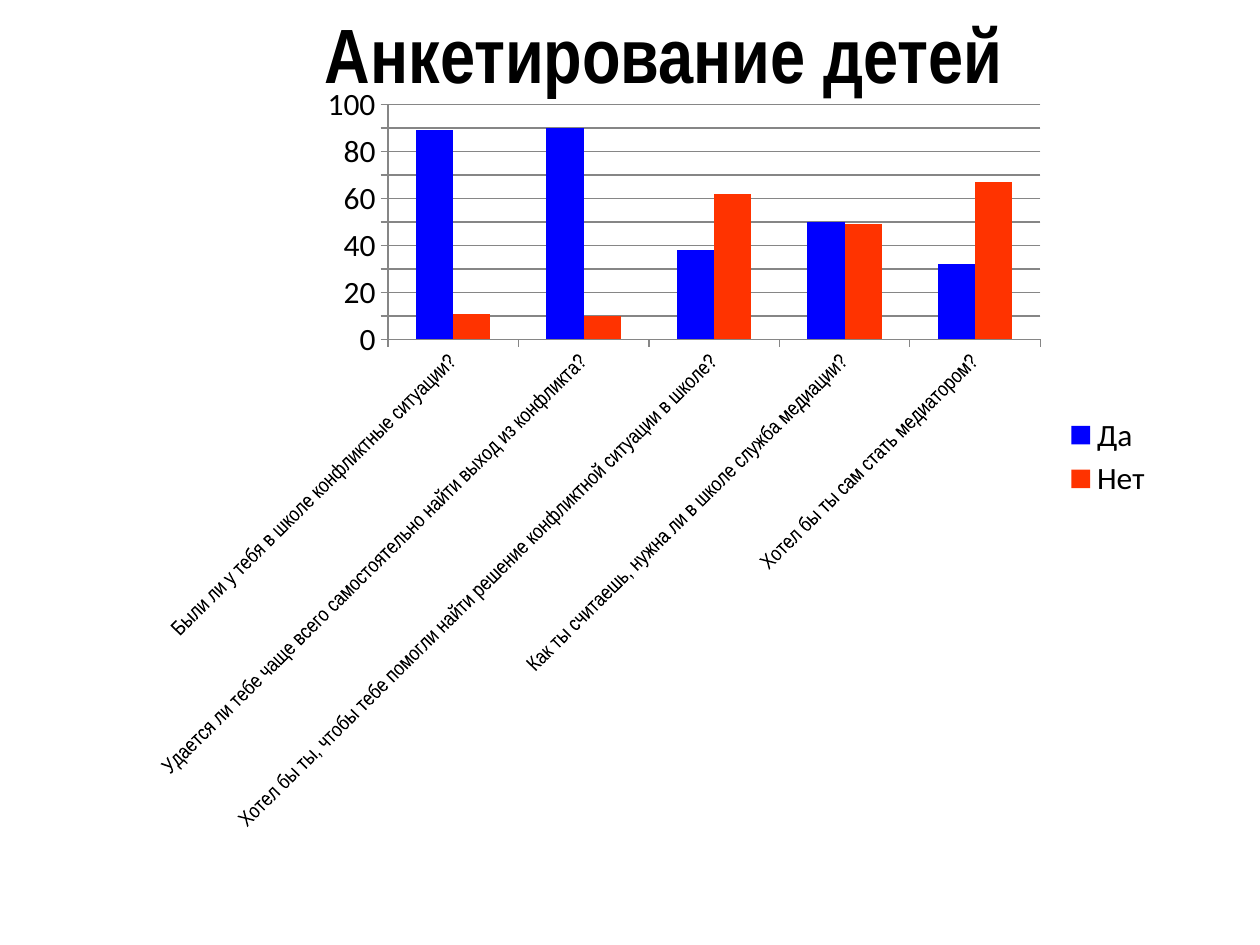
from dataclasses import dataclass

from pptx import Presentation
from pptx import util as u
from pptx.chart.data import CategoryChartData
from pptx.dml.color import RGBColor
from pptx.enum import chart as ch
from pptx.enum import text
from pptx.oxml.ns import qn

COLOURS = {"text": "000000", "yes": "0000FF", "no": "FF3300", "grid": "868686"}


@dataclass(frozen=True)
class Question:
    wording: str
    yes: int
    no: int


@dataclass(frozen=True)
class Answer:
    name: str
    key: str


QUESTIONS = [
    Question("Были ли у тебя в школе конфликтные ситуации?", 89, 11),
    Question("Удается ли тебе чаще всего самостоятельно найти выход из конфликта?", 90, 10),
    Question("Хотел бы ты, чтобы тебе помогли найти решение конфликтной ситуации в школе?", 38, 62),
    Question("Как ты считаешь, нужна ли в школе служба медиации?", 50, 49),
    Question("Хотел бы ты сам стать медиатором?", 32, 67),
]
ANSWERS = [Answer("Да", "yes"), Answer("Нет", "no")]


def colour(key: str) -> RGBColor:
    return RGBColor.from_string(COLOURS[key])


def style_font(font, name: str, size: float, bold: bool = False) -> None:
    font.name, font.size, font.bold = name, u.Pt(size), bold
    font.color.rgb = colour("text")


def style_line(line) -> None:
    line.color.rgb = colour("grid")
    line.width = u.Pt(0.75)


def add_survey(slide) -> None:
    survey = CategoryChartData()
    survey.categories = [question.wording for question in QUESTIONS]
    for answer in ANSWERS:
        survey.add_series(answer.name, [getattr(question, answer.key) for question in QUESTIONS])
    chart = slide.shapes.add_chart(
        ch.XL_CHART_TYPE.COLUMN_CLUSTERED,
        u.Inches(1.06), u.Inches(0.68), u.Inches(8.19), u.Inches(5.91), survey,
    ).chart
    chart.has_title = False
    style_font(chart.font, "Calibri", 18)
    chart.has_legend = True
    chart.legend.position = ch.XL_LEGEND_POSITION.RIGHT
    chart.legend.include_in_layout = False

    columns = chart.plots[0]
    columns.gap_width, columns.overlap = 150, 0
    columns.vary_by_categories = False
    for series, answer in zip(columns.series, ANSWERS):
        series.format.fill.solid()
        series.format.fill.fore_color.rgb = colour(answer.key)

    questions, percent = chart.category_axis, chart.value_axis
    for axis in (questions, percent):
        axis.major_tick_mark = ch.XL_TICK_MARK.OUTSIDE
        axis.minor_tick_mark = ch.XL_TICK_MARK.NONE
        style_line(axis.format.line)
    style_font(questions.tick_labels.font, "Arial Narrow", 12)
    questions._element.find(qn("c:txPr")).find(qn("a:bodyPr")).set("rot", "-2700000")
    percent.minimum_scale, percent.maximum_scale, percent.major_unit = 0, 100, 10
    percent.has_major_gridlines = True
    style_line(percent.major_gridlines.format.line)


def add_heading(slide, wording: str) -> None:
    frame = slide.shapes.add_textbox(
        u.Inches(2.48), u.Inches(0), u.Inches(5.65), u.Inches(0.84)
    ).text_frame
    frame.word_wrap = False
    frame.auto_size = text.MSO_AUTO_SIZE.SHAPE_TO_FIT_TEXT
    heading = frame.paragraphs[0]
    heading.text = wording
    style_font(heading.font, "Arial Narrow", 44, bold=True)


def main() -> None:
    """Build the slide with the results of the children's survey."""
    deck = Presentation()
    deck.slide_width, deck.slide_height = u.Inches(10), u.Inches(7.5)
    slide = deck.slides.add_slide(deck.slide_layouts[6])
    add_survey(slide)
    add_heading(slide, "Анкетирование детей")
    deck.save("out.pptx")


if __name__ == "__main__":
    main()
